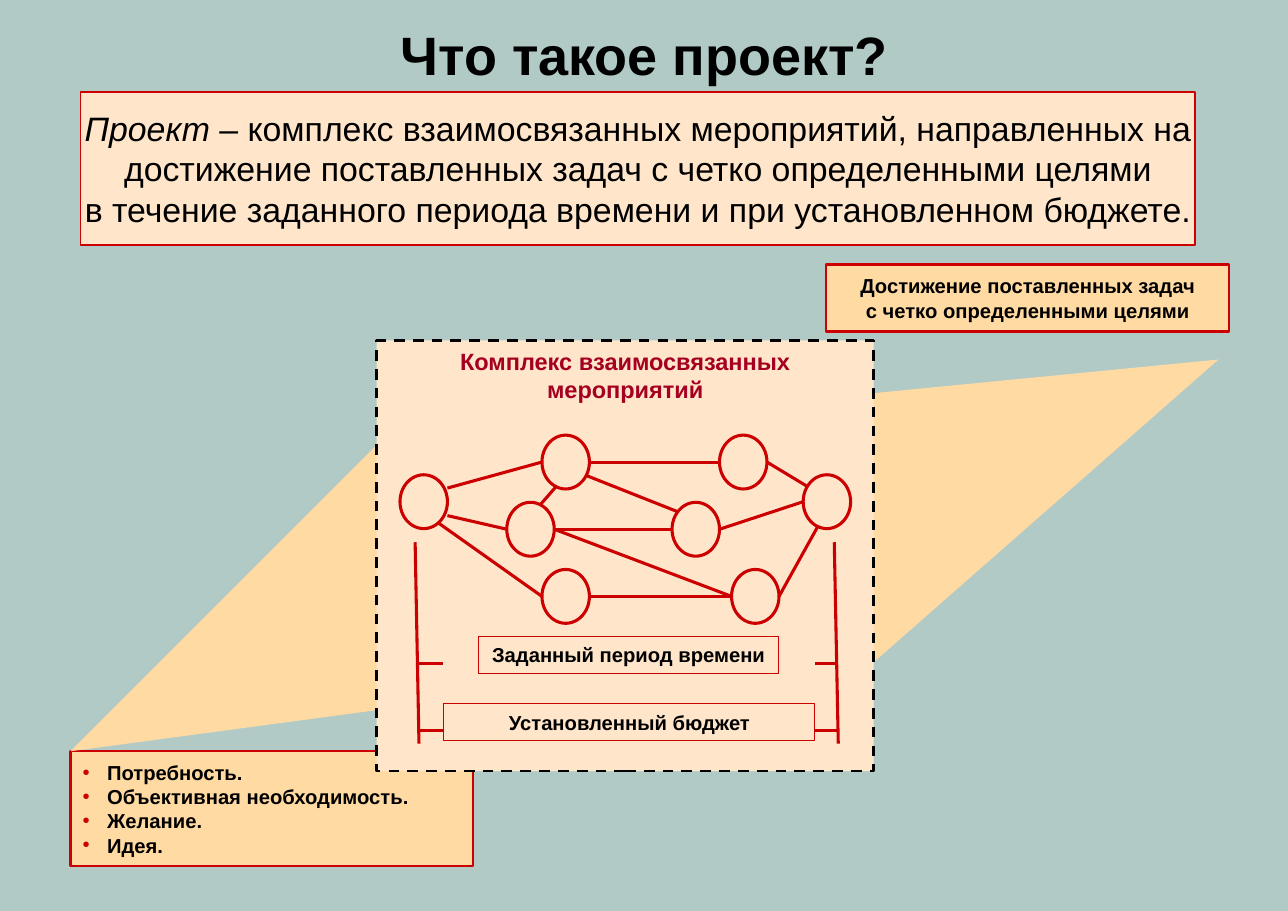
"""Build a slide that explains what a project is."""
from copy import deepcopy
from dataclasses import dataclass

from lxml.etree import SubElement
from pptx import Presentation
from pptx.dml.color import RGBColor
from pptx.enum.dml import MSO_LINE
from pptx.enum.shapes import MSO_CONNECTOR, MSO_SHAPE
from pptx.enum.text import MSO_ANCHOR, MSO_AUTO_SIZE, PP_ALIGN
from pptx.oxml.ns import qn
from pptx.util import Pt


@dataclass(frozen=True)
class Theme:
    """Colours, font and type sizes of the slide."""
    background: str = "B1CAC6"
    ink: str = "000000"
    red: str = "CC0000"
    heading: str = "A50021"
    sand: str = "FFDAA2"
    cream: str = "FFE6CB"
    font: str = "Arial"
    title_size: float = 35.3
    definition_size: float = 22.1
    heading_size: float = 15.4
    label_size: float = 13.2
    outline: float = 1.5
    wire: float = 2


class SlideBuilder:
    """Draw styled elements on the current slide, with lengths in points."""

    def __init__(self, slide, theme):
        self.slide = slide
        self.theme = theme
        slide.background.fill.solid()
        slide.background.fill.fore_color.rgb = RGBColor.from_string(theme.background)

    def place(self, shape, box):
        shape.left, shape.top, shape.width, shape.height = map(Pt, box)

    def paint(self, shape, fill=None, line=None, width=None):
        if fill:
            shape.fill.solid()
            shape.fill.fore_color.rgb = RGBColor.from_string(fill)
        else:
            shape.fill.background()
        if line:
            shape.line.color.rgb = RGBColor.from_string(line)
            shape.line.width = Pt(width)
        else:
            shape.line.fill.background()

    def format_paragraph(self, paragraph, size, color, bold, align):
        paragraph.alignment = align
        for run in paragraph.runs:
            run.font.name = self.theme.font
            run.font.size = Pt(size)
            run.font.bold = bold
            run.font.color.rgb = RGBColor.from_string(color)
        for line_break in paragraph._p.findall(qn("a:br")):
            line_break.insert(0, deepcopy(paragraph.runs[-1]._r.rPr))

    def format_frame(self, text_frame, anchor, wrap):
        text_frame.auto_size = MSO_AUTO_SIZE.NONE
        text_frame.word_wrap = wrap
        text_frame.vertical_anchor = anchor
        text_frame.margin_left = text_frame.margin_right = Pt(8)
        text_frame.margin_top = text_frame.margin_bottom = Pt(4)

    def title(self, text, box):
        shape = self.slide.shapes.title
        self.place(shape, box)
        shape.text_frame.text = text
        self.format_frame(shape.text_frame, MSO_ANCHOR.MIDDLE, True)
        self.format_paragraph(shape.text_frame.paragraphs[0], self.theme.title_size,
                              self.theme.ink, True, PP_ALIGN.CENTER)

    def bullets(self, items, box):
        shape = self.slide.placeholders[1]
        self.place(shape, box)
        self.paint(shape, self.theme.sand, self.theme.red, self.theme.outline)
        shape.text_frame.text = "\n".join(items)
        self.format_frame(shape.text_frame, MSO_ANCHOR.MIDDLE, True)
        for paragraph in shape.text_frame.paragraphs:
            self.format_paragraph(paragraph, self.theme.label_size, self.theme.ink,
                                  True, PP_ALIGN.LEFT)
            paragraph.space_before = Pt(0)
            properties = paragraph._p.get_or_add_pPr()
            properties.set("marL", str(Pt(16)))
            properties.set("indent", str(Pt(-16)))
            bullet_color = SubElement(properties, qn("a:buClr"))
            SubElement(bullet_color, qn("a:srgbClr"), val=self.theme.red)
            SubElement(properties, qn("a:buChar"), char="•")

    def panel(self, text, box, fill=None, line=None, width=1.5, size=None,
              color=None, bold=True, anchor=MSO_ANCHOR.MIDDLE, lead=None):
        shape = self.slide.shapes.add_shape(MSO_SHAPE.RECTANGLE, *map(Pt, box))
        shape.shadow.inherit = False
        self.paint(shape, fill, line or self.theme.red, width)
        self.format_frame(shape.text_frame, anchor, False)
        paragraph = shape.text_frame.paragraphs[0]
        paragraph.text = text
        if lead:
            lead_run = paragraph.add_run()
            lead_run.text = lead
            lead_run.font.italic = True
            paragraph.runs[0]._r.addprevious(lead_run._r)
        self.format_paragraph(paragraph, size or self.theme.label_size,
                              color or self.theme.ink, bold, PP_ALIGN.CENTER)
        return shape

    def triangle(self, points):
        start, *others = [tuple(map(Pt, point)) for point in points]
        outline = self.slide.shapes.build_freeform(*start)
        outline.add_line_segments(others, close=True)
        shape = outline.convert_to_shape()
        shape.shadow.inherit = False
        self.paint(shape, self.theme.sand)

    def node(self, left, top, width, height):
        shape = self.slide.shapes.add_shape(
            MSO_SHAPE.OVAL, *map(Pt, (left, top, width, height)))
        shape.shadow.inherit = False
        self.paint(shape, None, self.theme.red, self.theme.wire)

    def wire(self, begin, end):
        connector = self.slide.shapes.add_connector(
            MSO_CONNECTOR.STRAIGHT, *map(Pt, (*begin, *end)))
        connector.line.color.rgb = RGBColor.from_string(self.theme.red)
        connector.line.width = Pt(self.theme.wire)
        SubElement(connector._element.spPr, qn("a:effectLst"))


def draw_network(builder):
    """Draw the activities and the links between them."""
    width, height = 31, 35.2
    upper, outer, middle, lower = 284.4, 310.3, 328.3, 372.2
    nodes = {
        "start": (261.4, outer), "end": (524.9, outer),
        "upper_left": (354.2, upper), "upper_right": (470.2, upper),
        "middle_left": (331.2, middle), "middle_right": (439.2, middle),
        "lower_left": (354.2, lower), "lower_right": (478.1, lower),
    }
    for left, top in nodes.values():
        builder.node(left, top, width, height)
    entry = {name: (left, top + height / 2) for name, (left, top) in nodes.items()}
    leave = {name: (left + width, y) for name, (left, y) in entry.items()}
    for begin, end in [
        ((292.4, 319), entry["upper_left"]),
        ((292.4, 337), entry["middle_left"]),
        ((285.8, 341.3), entry["lower_left"]),
        (leave["upper_left"], entry["upper_right"]),
        (leave["middle_left"], entry["middle_right"]),
        (leave["middle_left"], entry["lower_right"]),
        (leave["lower_left"], entry["lower_right"]),
        (leave["middle_right"], entry["end"]),
        (leave["upper_right"], (527.4, 317.8)),
        (leave["lower_right"], (534.6, 343.8)),
        ((382.7, 310.6), (443.2, 334.6)),
        ((363.6, 317.8), (352.8, 330.2)),
    ]:
        builder.wire(begin, end)


def draw_limits(builder):
    """Draw the time and budget labels with their brackets."""
    builder.panel("Заданный период времени", (312.5, 416, 196.5, 24), width=0.75)
    builder.panel("Установленный бюджет", (290, 460, 242.5, 24), width=0.75)
    for top_x, bottom_x, tick_x in [(271.3, 273.8, 289.5), (545.2, 547.8, 532.3)]:
        builder.wire((top_x, 354.4), (bottom_x, 486))
        for y in (433.5, 477.4):
            builder.wire((bottom_x, y), (tick_x, y))


def main():
    """Assemble and save the slide."""
    theme = Theme()
    presentation = Presentation()
    presentation.slide_width, presentation.slide_height = Pt(841.7), Pt(595.4)
    builder = SlideBuilder(
        presentation.slides.add_slide(presentation.slide_layouts[1]), theme)

    builder.title("Что такое проект?", (64, 10, 714, 50))
    builder.bullets(["Потребность.", "Объективная необходимость.", "Желание.", "Идея."],
                    (46, 491, 263, 75))
    builder.panel("Достижение поставленных задач\nс четко определенными целями",
                  (540, 172.8, 263, 44), theme.sand)
    builder.triangle([(46, 491), (277, 260), (277, 460)])
    builder.triangle([(540, 260), (540, 460), (796.3, 235)])

    activities = builder.panel(
        "Комплекс взаимосвязанных\nмероприятий", (246.2, 222.5, 324.8, 281.5),
        theme.cream, theme.ink, 1.75, theme.heading_size, theme.heading,
        anchor=MSO_ANCHOR.TOP)
    activities.line.dash_style = MSO_LINE.DASH
    draw_network(builder)
    draw_limits(builder)

    builder.panel(
        "– комплекс взаимосвязанных мероприятий, направленных на\n"
        "достижение поставленных задач с четко определенными целями\n"
        "в течение заданного периода времени и при установленном бюджете.",
        (52.5, 60, 728.6, 100), theme.cream, width=1,
        size=theme.definition_size, bold=False, lead="Проект ")
    presentation.save("out.pptx")


if __name__ == "__main__":
    main()
